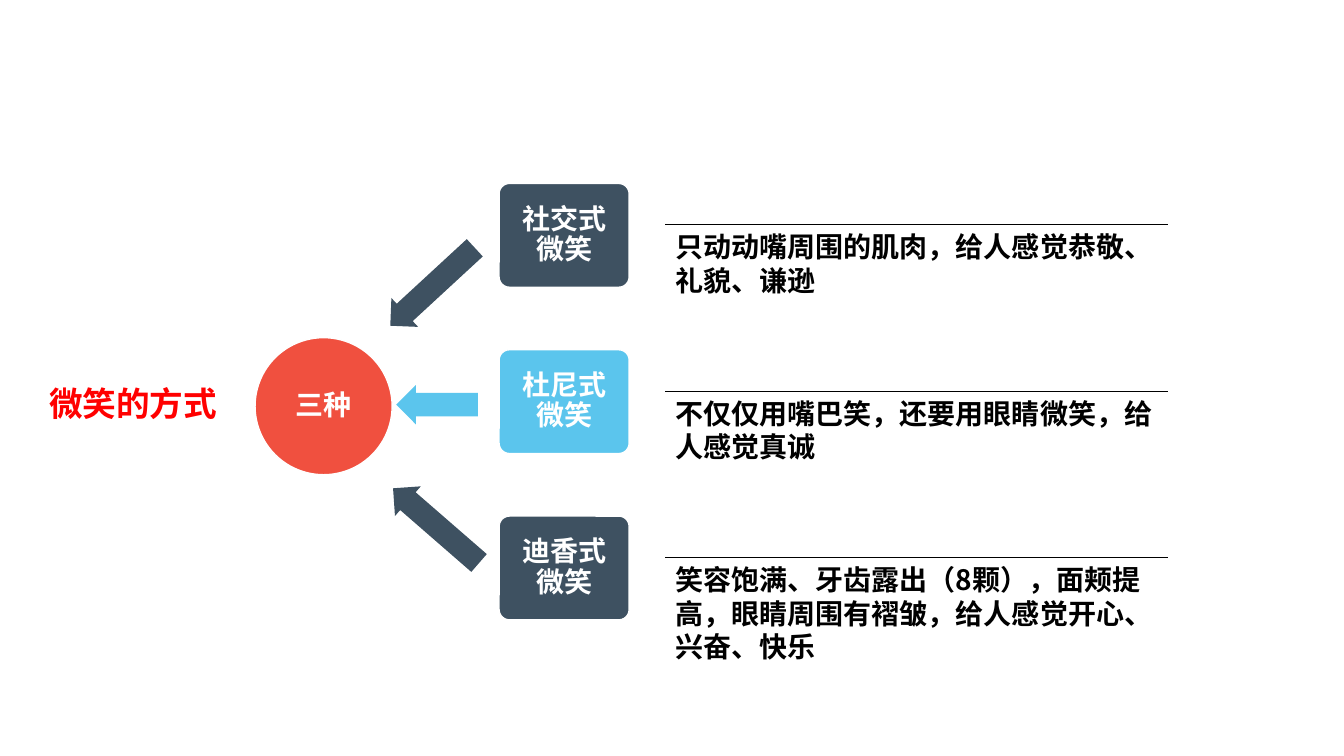
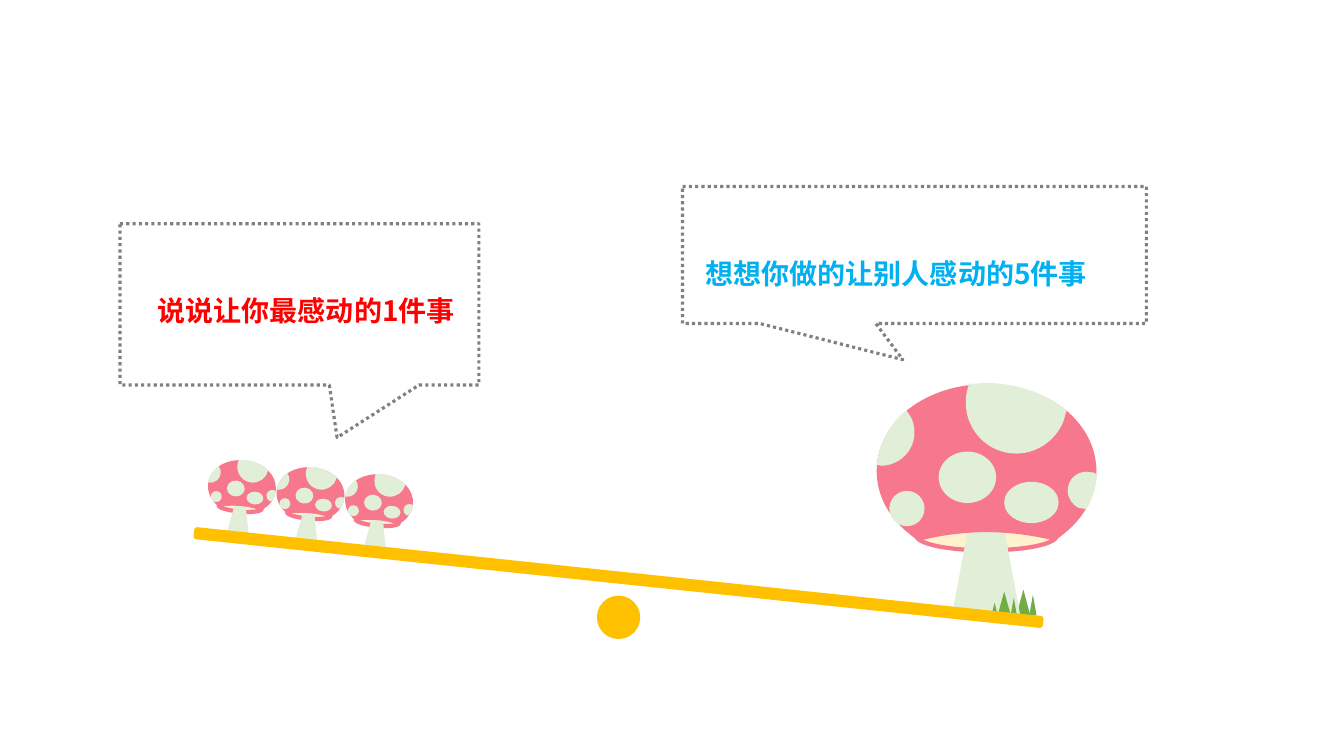
from math import cos, radians, sin
from typing import NamedTuple

from lxml import etree
from pptx import Presentation
from pptx.dml.color import RGBColor
from pptx.enum.dml import MSO_LINE
from pptx.enum.shapes import MSO_CONNECTOR, MSO_SHAPE
from pptx.enum.text import MSO_ANCHOR, MSO_AUTO_SIZE, PP_ALIGN
from pptx.oxml.ns import qn
from pptx.util import Inches, Pt

OVAL, ROUNDED = MSO_SHAPE.OVAL, MSO_SHAPE.ROUNDED_RECTANGLE
TRIANGLE, ARROW = MSO_SHAPE.ISOSCELES_TRIANGLE, MSO_SHAPE.LEFT_ARROW
CALLOUT, DOTTED = MSO_SHAPE.RECTANGULAR_CALLOUT, MSO_LINE.ROUND_DOT
LEFT, CENTER, RIGHT = PP_ALIGN.LEFT, PP_ALIGN.CENTER, PP_ALIGN.RIGHT
TOP, MIDDLE = MSO_ANCHOR.TOP, MSO_ANCHOR.MIDDLE

WHITE = RGBColor(0xFF, 0xFF, 0xFF)
BLACK = RGBColor(0, 0, 0)
RED = RGBColor(0xFF, 0, 0)
BLUE = RGBColor(0, 0xB0, 0xF0)
CORAL = RGBColor(0xF0, 0x50, 0x3F)
SLATE = RGBColor(0x3E, 0x51, 0x61)
SKY = RGBColor(0x5B, 0xC5, 0xED)
GREY = RGBColor(0x80, 0x80, 0x80)
GOLD = RGBColor(0xFF, 0xC0, 0)
PINK = RGBColor(0xF7, 0x77, 0x8D)
PALE_GREEN = RGBColor(0xE1, 0xEF, 0xD8)
CREAM = RGBColor(0xFF, 0xF2, 0xCC)
GRASS = RGBColor(0x70, 0xAD, 0x47)

CJK_FONT, LATIN_FONT = "Noto Sans CJK SC", "Calibri"
TITLE_ONLY, BLANK = 5, 6


class Box(NamedTuple):
    x: float
    y: float
    w: float
    h: float


class Smile(NamedTuple):
    name: str
    detail: str
    detail_height: float
    color: RGBColor
    font: str
    arrow: Box
    angle: float


class Callout(NamedTuple):
    box: Box
    tail: tuple[float, float]
    text_box: Box
    text: str
    color: RGBColor
    align: PP_ALIGN


class Mushroom(NamedTuple):
    x: float  # cap centre
    y: float
    scale: float
    angle: float


SMILES = [
    Smile("社交式微笑", "只动动嘴周围的肌肉，给人感觉恭敬、礼貌、谦逊", 0.85,
          SLATE, CJK_FONT, Box(3.72, 2.65, 1.14, 0.39), 317.3),
    Smile("杜尼式微笑", "不仅仅用嘴巴笑，还要用眼睛微笑，给人感觉真诚", 0.85,
          SKY, LATIN_FONT, Box(3.93, 3.82, 0.81, 0.39), 0),
    Smile("迪香式微笑", "笑容饱满、牙齿露出（8颗），面颊提高，眼睛周围有褶皱，给人感觉开心、兴奋、快乐", 1.11,
          SLATE, CJK_FONT, Box(3.76, 5.02, 1.13, 0.39), 41),
]
ROW_TOP, ROW_STEP = 1.82, 1.65

CALLOUTS = [
    Callout(Box(6.77, 1.85, 4.6, 1.36), (-0.025, 0.764), Box(6.9, 2.5, 4.36, 0.56),
            "想想你做的让别人感动的5件事", BLUE, LEFT),
    Callout(Box(1.19, 2.22, 3.56, 1.6), (0.105, 0.826), Box(1.34, 2.86, 3.27, 0.84),
            "说说让你最感动的1件事", RED, RIGHT),
]

# Mushroom parts, in inches from the cap's top left corner at full size.
# Outlines: a start point, then line ends (2 numbers) or Bezier curves (6).
CAP_CENTRE = (1.09, 0.79)
GILLS = Box(0.4, 1.36, 1.39, 0.29)
STEM = [(0.75, 2.3), (0.92, 1.39), (1.26, 1.39), (1.43, 2.3)]
CAP = [(1.1, 0), (1.37, 0, 1.65, 0.08, 1.87, 0.25), (2.29, 0.59, 2.29, 1.14, 1.87, 1.48),
       (1.77, 1.56), (1.71, 1.54), (1.53, 1.5, 1.32, 1.47, 1.1, 1.47),
       (0.87, 1.47, 0.66, 1.5, 0.49, 1.54), (0.42, 1.56), (0.32, 1.48),
       (-0.1, 1.14, -0.1, 0.59, 0.32, 0.25), (0.54, 0.08, 0.82, 0, 1.1, 0)]
ROUND_SPOTS = [Box(0.62, 0.67, 0.57, 0.51), Box(1.27, 0.97, 0.54, 0.41)]
LOW_SPOT = Box(0.13, 1.06, 0.35, 0.35)
EDGE_SPOTS = [
    [(0.3, 0.26), (0.32, 0.29), (0.36, 0.34, 0.38, 0.41, 0.38, 0.48),
     (0.38, 0.66, 0.23, 0.81, 0.05, 0.81), (0, 0.8), (0.01, 0.78),
     (0.03, 0.61, 0.11, 0.45, 0.24, 0.31)],
    [(1.09, -0.01), (1.37, -0.01, 1.66, 0.08, 1.87, 0.25), (1.89, 0.26), (1.88, 0.29),
     (1.84, 0.51, 1.63, 0.69, 1.39, 0.69), (1.11, 0.69, 0.89, 0.46, 0.89, 0.19),
     (0.89, 0.15, 0.89, 0.12, 0.9, 0.08), (0.92, 0)],
    [(2.09, 0.87), (2.11, 0.87, 2.14, 0.88, 2.16, 0.88), (2.19, 0.9), (2.19, 0.91),
     (2.18, 1.01, 2.15, 1.12, 2.1, 1.21), (2.08, 1.24), (2.01, 1.23),
     (1.95, 1.2, 1.9, 1.14, 1.9, 1.06), (1.9, 0.95, 1.98, 0.87, 2.09, 0.87)],
]
BIG_MUSHROOM = Mushroom(9.78, 4.6, 1, 0)
SMALL_MUSHROOMS = [Mushroom(2.4 + 0.68 * i, 4.81 + 0.07 * i, 0.31, 5) for i in range(3)]
BACK_GRASS = [Box(10.08, 5.85, 0.14, 0.26), Box(10.21, 5.9, 0.07, 0.2)]
FRONT_GRASS = [Box(9.89, 5.87, 0.14, 0.25), Box(10.02, 5.93, 0.07, 0.2),
               Box(9.83, 5.98, 0.07, 0.14)]


def inches(box: Box) -> list:
    return [Inches(v) for v in box]


def paint(shape, fill=None, line=None, width: float = 1, dash=None) -> None:
    shape.shadow.inherit = False
    if fill is None:
        shape.fill.background()
    else:
        shape.fill.solid()
        shape.fill.fore_color.rgb = fill
    if line is None:
        shape.line.fill.background()
        return
    shape.line.color.rgb = line
    shape.line.width = Pt(width)
    if dash is not None:
        shape.line.dash_style = dash


def add_shape(s, kind, box: Box, fill=None, adjust=(), angle: float = 0, **outline):
    shape = s.shapes.add_shape(kind, *inches(box))
    for i, value in enumerate(adjust):
        shape.adjustments[i] = value
    shape.rotation = angle
    paint(shape, fill, **outline)
    return shape


def write(shape, text: str, color: RGBColor, size: float = 20, font: str = CJK_FONT,
          align=LEFT, anchor=TOP, **spacing) -> None:
    tf = shape.text_frame
    frame_format = {"word_wrap": True, "auto_size": MSO_AUTO_SIZE.NONE,
                    "vertical_anchor": anchor}
    for name, value in frame_format.items():
        setattr(tf, name, value)
    p = tf.paragraphs[0]
    for name, value in {"alignment": align, **spacing}.items():
        setattr(p, name, value)
    r = p.add_run()
    r.text = text
    for name, value in {"size": Pt(size), "bold": True, "name": font}.items():
        setattr(r.font, name, value)
    r.font.color.rgb = color
    # East Asian characters take their own typeface
    etree.SubElement(r.font._element, qn("a:ea")).set("typeface", CJK_FONT)


def add_text(s, box: Box, text: str, color: RGBColor, align=LEFT) -> None:
    write(s.shapes.add_textbox(*inches(box)), text, color, align=align)


def add_label(shape, text: str, font: str) -> None:
    write(shape, text, WHITE, font=font, align=CENTER, anchor=MIDDLE,
          line_spacing=0.9, space_after=Pt(7))


def add_rule(s, x1: float, x2: float, y: float) -> None:
    rule = s.shapes.add_connector(MSO_CONNECTOR.STRAIGHT, Inches(x1), Inches(y),
                                  Inches(x2), Inches(y))
    rule.line.color.rgb = BLACK
    rule.line.width = Pt(0.5)
    etree.SubElement(rule._element.spPr, qn("a:effectLst"))


def pairs(segment: tuple) -> list:
    return list(zip(segment[::2], segment[1::2]))


def flatten(outline: list, steps: int = 12) -> list:
    """Sample the outline, to find its bounds."""
    points = [outline[0]]
    for segment in outline[1:]:
        if len(segment) == 2:
            points.append(segment)
            continue
        controls = [points[-1], *pairs(segment)]
        for k in range(1, steps + 1):
            t = k / steps
            weights = ((1 - t) ** 3, 3 * t * (1 - t) ** 2, 3 * t * t * (1 - t), t ** 3)
            points.append(tuple(sum(w * c[axis] for w, c in zip(weights, controls))
                                for axis in (0, 1)))
    return points


def add_outline(s, outline: list, fill: RGBColor):
    points = [(Inches(x), Inches(y)) for x, y in flatten(outline)]
    builder = s.shapes.build_freeform(*points[0])
    builder.add_line_segments(points[1:], close=True)
    shape = builder.convert_to_shape()
    # Draw true curves inside the bounds
    curve = next(shape._element.iter(qn("a:pathLst")))[0]
    for child in list(curve):
        curve.remove(child)
    for i, segment in enumerate(outline):
        tag = "a:moveTo" if i == 0 else "a:lnTo" if len(segment) == 2 else "a:cubicBezTo"
        step = etree.SubElement(curve, qn(tag))
        for x, y in pairs(segment):
            pt = etree.SubElement(step, qn("a:pt"))
            pt.set("x", str(Inches(x) - shape.left))
            pt.set("y", str(Inches(y) - shape.top))
    etree.SubElement(curve, qn("a:close"))
    paint(shape, fill)
    return shape


def add_mushroom(s, m: Mushroom) -> None:
    turn = radians(m.angle)
    pivot_x, pivot_y = (Inches(v) for v in CAP_CENTRE)

    def place(shape) -> None:
        """Scale and turn a full-size part about the cap centre."""
        dx = (shape.left + shape.width / 2 - pivot_x) * m.scale
        dy = (shape.top + shape.height / 2 - pivot_y) * m.scale
        shape.width, shape.height = int(shape.width * m.scale), int(shape.height * m.scale)
        shape.left = int(Inches(m.x) + dx * cos(turn) - dy * sin(turn) - shape.width / 2)
        shape.top = int(Inches(m.y) + dx * sin(turn) + dy * cos(turn) - shape.height / 2)
        shape.rotation = m.angle

    place(add_shape(s, OVAL, GILLS, CREAM, line=PINK, width=3))
    place(add_outline(s, STEM, PALE_GREEN))
    place(add_outline(s, CAP, PINK))
    for spot in ROUND_SPOTS:
        place(add_shape(s, OVAL, spot, PALE_GREEN))
    for spot in EDGE_SPOTS:
        place(add_outline(s, spot, PALE_GREEN))
    place(add_shape(s, OVAL, LOW_SPOT, PALE_GREEN))


def add_grass(s, blades: list[Box]) -> None:
    for blade in blades:
        add_shape(s, TRIANGLE, blade, GRASS)


def build_smiles(prs) -> None:
    s = prs.slides.add_slide(prs.slide_layouts[TITLE_ONLY])
    # Heading at the left
    title = s.shapes.title
    title.left, title.top, title.width, title.height = inches(Box(0.34, 3.75, 1.96, 1.62))
    write(title, "微笑的方式", RED, size=24, align=CENTER)
    # Hub
    hub = add_shape(s, OVAL, Box(2.53, 3.35, 1.36, 1.36), CORAL, line=WHITE)
    add_label(hub, "三种", LATIN_FONT)
    # One row for each smile
    for i, smile in enumerate(SMILES):
        top = ROW_TOP + i * ROW_STEP
        rule_y = top + 0.41
        add_text(s, Box(6.6, rule_y, 5.04, smile.detail_height), smile.detail, BLACK)
        add_rule(s, 6.6, 11.58, rule_y)
        card = add_shape(s, ROUNDED, Box(4.95, top, 1.29, 1.03), smile.color, (0.1,), line=WHITE)
        add_label(card, smile.name, smile.font)
    # Arrows to the hub
    for smile in SMILES:
        add_shape(s, ARROW, smile.arrow, smile.color, (0.6, 0.5), smile.angle)


def build_seesaw(prs) -> None:
    s = prs.slides.add_slide(prs.slide_layouts[BLANK])
    # Mushrooms and grass
    add_grass(s, BACK_GRASS)
    add_mushroom(s, BIG_MUSHROOM)
    add_grass(s, FRONT_GRASS)
    for mushroom in SMALL_MUSHROOMS:
        add_mushroom(s, mushroom)
    # Pivot and beam
    add_shape(s, OVAL, Box(5.92, 5.91, 0.43, 0.43), GOLD)
    add_shape(s, ROUNDED, Box(1.9, 5.67, 8.47, 0.12), GOLD, (0.25,), 6)
    # Speech callouts
    for c in CALLOUTS:
        add_shape(s, CALLOUT, c.box, adjust=c.tail, line=GREY, width=2.25, dash=DOTTED)
        add_text(s, c.text_box, c.text, c.color, c.align)


def main() -> None:
    prs = Presentation()
    prs.slide_width, prs.slide_height = Inches(13.33), Inches(7.5)
    build_smiles(prs)
    build_seesaw(prs)
    prs.save("out.pptx")


if __name__ == "__main__":
    main()
